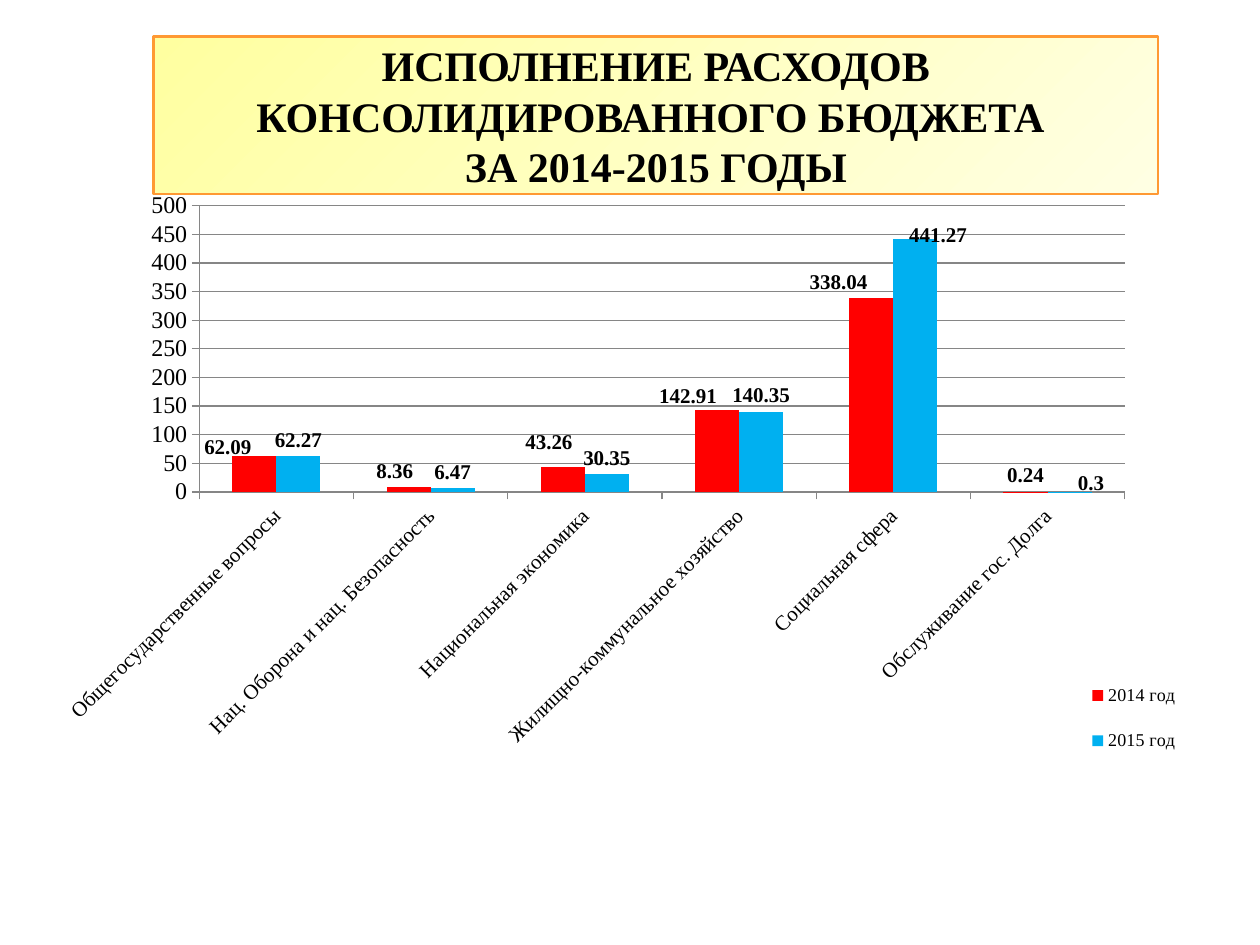
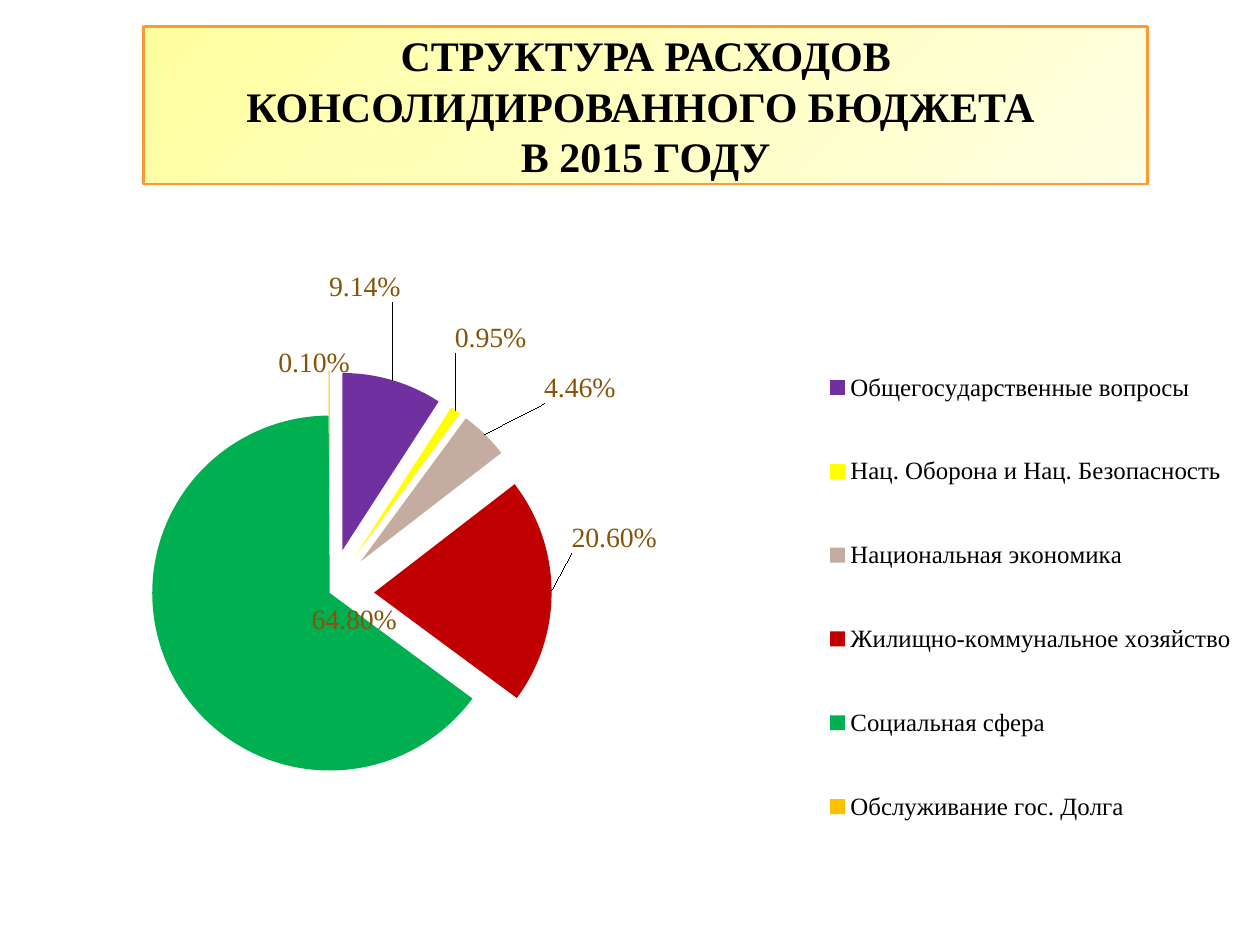
from copy import deepcopy

from pptx import Presentation
from pptx.chart.data import CategoryChartData
from pptx.dml.color import RGBColor
from pptx.enum.chart import (XL_CHART_TYPE, XL_LABEL_POSITION,
                             XL_LEGEND_POSITION, XL_TICK_MARK)
from pptx.enum.shapes import MSO_SHAPE
from pptx.enum.text import MSO_ANCHOR, PP_ALIGN
from pptx.oxml import parse_xml
from pptx.oxml.ns import nsdecls, qn
from pptx.util import Inches, Pt

COLUMNS = XL_CHART_TYPE.COLUMN_CLUSTERED
PIE = XL_CHART_TYPE.PIE
OUTSIDE_END = XL_LABEL_POSITION.OUTSIDE_END
LEGEND_RIGHT = XL_LEGEND_POSITION.RIGHT
TICK_OUTSIDE = XL_TICK_MARK.OUTSIDE
RECTANGLE = MSO_SHAPE.RECTANGLE
MIDDLE = MSO_ANCHOR.MIDDLE
CENTER = PP_ALIGN.CENTER

BLACK = RGBColor(0x00, 0x00, 0x00)
BAND_START = RGBColor(0xFF, 0xFF, 0xA0)
BAND_END = RGBColor(0xFF, 0xFF, 0xE3)
BAND_BORDER = RGBColor(0xFF, 0x99, 0x33)
AXIS_GRAY = RGBColor(0x86, 0x86, 0x86)
LABEL_BROWN = RGBColor(0x85, 0x54, 0x0A)
RED = RGBColor(0xFF, 0x00, 0x00)
SKY = RGBColor(0x00, 0xB0, 0xF0)
PURPLE = RGBColor(0x70, 0x30, 0xA0)
YELLOW = RGBColor(0xFF, 0xFF, 0x00)
TAUPE = RGBColor(0xC4, 0xAD, 0xA0)
DARK_RED = RGBColor(0xC0, 0x00, 0x00)
GREEN = RGBColor(0x00, 0xB0, 0x50)
AMBER = RGBColor(0xFF, 0xC0, 0x00)

TEXT_FONT = "Times New Roman"
CHART_FONT = "Roboto"
BAND_SIZE = (7.97, 1.25)
EXPLOSION = 25

# Label shifts are inches right and down from the usual place, by point index.
YEARS = [
    ("2014 год", RED, (62.09, 8.36, 43.26, 142.91, 338.04, 0.24),
     {0: (-0.21, 0.06), 1: (-0.11, 0), 2: (-0.11, -0.07),
      3: (-0.23, 0.02), 4: (-0.26, 0)}),
    ("2015 год", SKY, (62.27, 6.47, 30.35, 140.35, 441.27, 0.3),
     {4: (0.18, 0.1), 5: (0.17, 0.06)}),
]
YEAR_CATEGORIES = [
    "Общегосударственные вопросы", "Нац. Оборона и нац. Безопасность",
    "Национальная экономика", "Жилищно-коммунальное хозяйство",
    "Социальная сфера", "Обслуживание гос. Долга"]

# Category, share, colour, label shift
SHARES = [
    ("Общегосударственные вопросы", 0.0914, PURPLE, (-0.52, -0.56)),
    ("Нац. Оборона и Нац. Безопасность", 0.0095, YELLOW, (-0.04, -0.4)),
    ("Национальная экономика", 0.0446, TAUPE, (0.43, -0.2)),
    ("Жилищно-коммунальное хозяйство", 0.206, DARK_RED, (0.1, -0.42)),
    ("Социальная сфера", 0.648, GREEN, (1.84, -0.57)),
    ("Обслуживание гос. Долга", 0.001, AMBER, (-0.12, 0.12)),
]


def style_font(font, size, color=BLACK, name=TEXT_FONT, bold=False):
    font.size = Pt(size)
    font.color.rgb = color
    font.name = name
    font.bold = bold


def add_title_band(page, left, top, lines):
    band = page.shapes.add_shape(RECTANGLE, Inches(left), Inches(top),
                                 *map(Inches, BAND_SIZE))
    band.shadow.inherit = False
    band.fill.gradient()
    band.fill.gradient_angle = 315
    for stop, color in zip(band.fill.gradient_stops, (BAND_START, BAND_END)):
        stop.color.rgb = color
    band.line.color.rgb = BAND_BORDER
    band.line.width = Pt(1.5)
    frame = band.text_frame
    frame.word_wrap = True
    frame.vertical_anchor = MIDDLE
    frame.text = "\n".join(lines)
    for para in frame.paragraphs:
        para.alignment = CENTER
        style_font(para.font, 24, bold=True)


def manual_layout(x, y, size=None, inner=False):
    """Return a layout element; without a size it is a shift of a label."""
    settings = []
    if inner:
        settings.append(("layoutTarget", "inner"))
    if size:
        settings += [("xMode", "edge"), ("yMode", "edge")]
    settings += [("x", x), ("y", y)]
    if size:
        settings += zip("wh", size)
    body = "".join(f'<c:{tag} val="{value}"/>' for tag, value in settings)
    return parse_xml(f'<c:layout {nsdecls("c")}><c:manualLayout>{body}'
                     '</c:manualLayout></c:layout>')


def place_plot(chart, x, y, width, height):
    area = chart.element.find(".//" + qn("c:plotArea"))
    for layout in area.findall(qn("c:layout")):
        area.remove(layout)
    area.insert(0, manual_layout(x, y, (width, height), inner=True))


def add_legend(chart, box, chart_box, size):
    """Place the legend; both boxes are in inches on the slide."""
    chart.has_legend = True
    legend = chart.legend
    legend.position = LEGEND_RIGHT
    legend.include_in_layout = False
    style_font(legend.font, size)
    left, top, width, height = chart_box
    layout = manual_layout((box[0] - left) / width, (box[1] - top) / height,
                           (box[2] / width, box[3] / height))
    chart.element.find(".//" + qn("c:legendPos")).addnext(layout)


def shift_labels(series, shifts, chart_box):
    """Give single points their own labels, styled as the series labels."""
    labels = series.data_labels._element
    shared = [part for part in labels if part.tag != qn("c:showLeaderLines")]
    for place, (index, (right, down)) in enumerate(shifts.items()):
        label = parse_xml(f'<c:dLbl {nsdecls("c")}><c:idx val="{index}"/></c:dLbl>')
        label.append(manual_layout(right / chart_box[2], down / chart_box[3]))
        label.extend(deepcopy(part) for part in shared)
        labels.insert(place, label)


def show_values(series, size, color=BLACK, bold=False):
    labels = series.data_labels
    labels.show_value = True
    labels.position = OUTSIDE_END
    style_font(labels.font, size, color, bold=bold)
    return labels


def add_base_chart(page, kind, box, data, size):
    chart = page.shapes.add_chart(kind, *map(Inches, box), data).chart
    chart.has_title = False
    style_font(chart.font, size, name=CHART_FONT)
    return chart


def style_axis(axis, size):
    axis.major_tick_mark = TICK_OUTSIDE
    axis.format.line.color.rgb = AXIS_GRAY
    style_font(axis.tick_labels.font, size)


def add_years_chart(page, box):
    data = CategoryChartData()
    data.categories = YEAR_CATEGORIES
    for name, _, values, _ in YEARS:
        data.add_series(name, values)
    chart = add_base_chart(page, COLUMNS, box, data, 15.3)
    place_plot(chart, 0.276, 0.08, 0.589, 0.248)
    add_legend(chart, (8.55, 5.24, 0.9, 0.92), box, 10.3)

    style_axis(chart.category_axis, 12)
    chart.category_axis._element.find(
        ".//" + qn("a:bodyPr")).set("rot", "-2700000")
    values_axis = chart.value_axis
    style_axis(values_axis, 13.7)
    values_axis.minimum_scale, values_axis.maximum_scale = 0, 500
    values_axis.major_unit = 50
    values_axis.has_major_gridlines = True
    values_axis.major_gridlines.format.line.color.rgb = AXIS_GRAY

    plot = chart.plots[0]
    plot.vary_by_categories = False
    plot.gap_width = 150
    plot.overlap = 0
    for series, (_, color, _, shifts) in zip(plot.series, YEARS):
        series.format.fill.solid()
        series.format.fill.fore_color.rgb = color
        labels = show_values(series, 12, bold=True)
        for leader in labels._element.findall(qn("c:showLeaderLines")):
            leader.set("val", "0")
        shift_labels(series, shifts, box)


def explosion(percent):
    return parse_xml(f'<c:explosion {nsdecls("c")} val="{percent}"/>')


def add_shares_chart(page, box):
    data = CategoryChartData(number_format="0.00%")
    data.categories = [name for name, *_ in SHARES]
    data.add_series("Series 1", [share for _, share, *_ in SHARES])
    chart = add_base_chart(page, PIE, box, data, 15.9)
    place_plot(chart, 0.08, 0.326, 0.405, 0.387)
    add_legend(chart, (6.53, 2.52, 3.3, 4.44), box, 14.2)

    plot = chart.plots[0]
    plot.vary_by_categories = True
    series = plot.series[0]
    for index, (_, _, color, _) in enumerate(SHARES):
        fill = series.points[index].format.fill
        fill.solid()
        fill.fore_color.rgb = color
    points = series._element.findall(qn("c:dPt"))
    points[0].addprevious(explosion(EXPLOSION))
    for point, (_, _, color, _) in zip(points, SHARES):
        percent = 0 if color == GREEN else EXPLOSION
        point.find(qn("c:idx")).addnext(explosion(percent))
    labels = show_values(series, 15.9, LABEL_BROWN)
    labels.number_format = "0.00%"
    labels.number_format_is_linked = False
    shift_labels(series, dict(enumerate(row[3] for row in SHARES)), box)


def build_years_slide(page):
    add_title_band(page, 1.22, 0.29, [
        "ИСПОЛНЕНИЕ РАСХОДОВ КОНСОЛИДИРОВАННОГО БЮДЖЕТА ",
        "ЗА 2014-2015 ГОДЫ"])
    add_years_chart(page, (-1.86, 0.9, 12.47, 9.16))


def build_shares_slide(page):
    add_title_band(page, 1.14, 0.21, [
        "СТРУКТУРА РАСХОДОВ КОНСОЛИДИРОВАННОГО БЮДЖЕТА ",
        "В 2015 ГОДУ"])
    add_shares_chart(page, (-1.12, -0.02, 13.23, 9.1))


def main():
    deck = Presentation()
    deck.slide_width, deck.slide_height = Inches(10), Inches(7.5)
    for build in (build_years_slide, build_shares_slide):
        build(deck.slides.add_slide(deck.slide_layouts[6]))
    deck.save("out.pptx")


if __name__ == "__main__":
    main()
